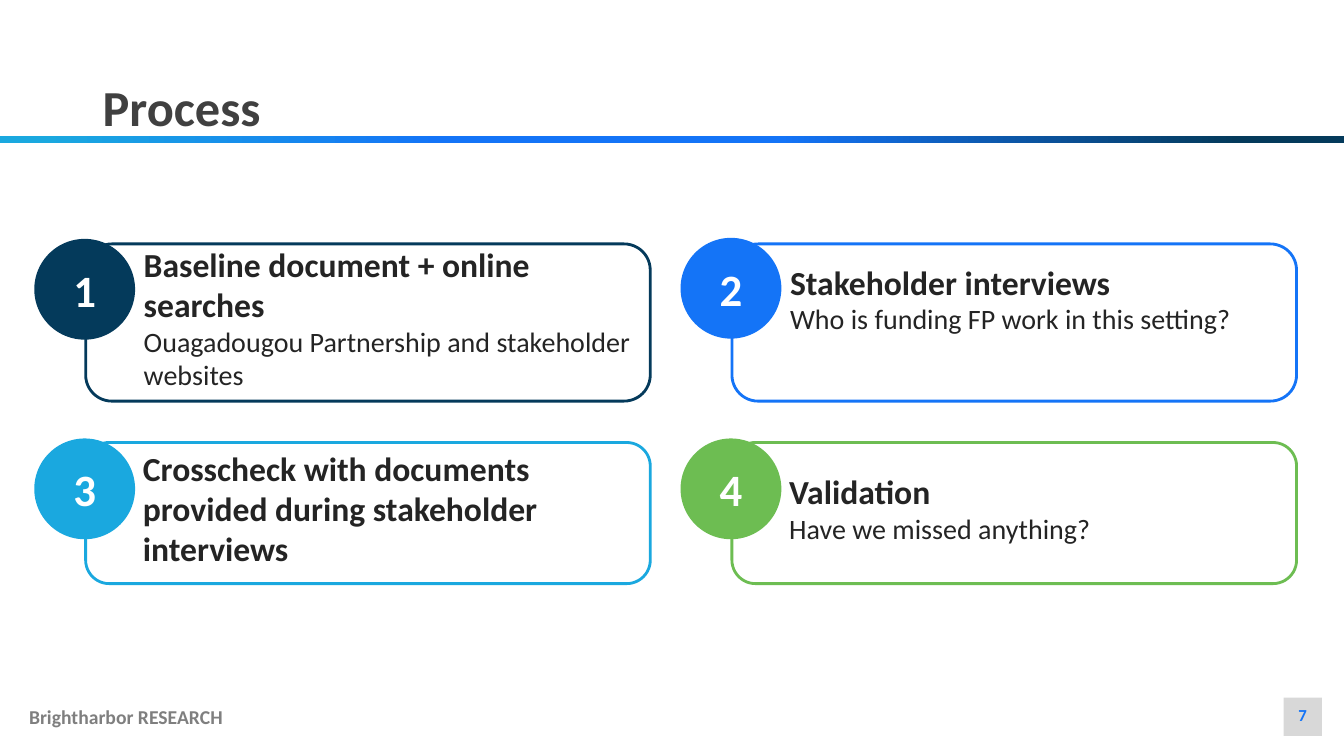
"""Build the four-step "Process" slide."""
import copy

import pptx
import pptx.dml.color
import pptx.enum.shapes
import pptx.enum.text
import pptx.oxml.ns
import pptx.util

PX = 9144
COLORS = {
    "navy": "043A5B", "blue": "1474F7", "sky": "1AA8DF", "green": "6DBD52",
    "ink": "242424", "title": "404040", "footer": "7F7F7F", "badge": "D8D8D8", "white": "FFFFFF",
}
SHAPES = pptx.enum.shapes.MSO_SHAPE
TOP = pptx.enum.text.MSO_ANCHOR.TOP
MIDDLE = pptx.enum.text.MSO_ANCHOR.MIDDLE
LEFT = pptx.enum.text.PP_ALIGN.LEFT
CENTER = pptx.enum.text.PP_ALIGN.CENTER

deck = pptx.Presentation()
deck.slide_width, deck.slide_height = 1333 * PX, 750 * PX
slide = deck.slides.add_slide(deck.slide_layouts[6])


def add_part(kind, box, fill=None, outline=None):
    part = slide.shapes.add_shape(kind, *[length * PX for length in box])
    part.shadow.inherit = False
    for paint, color in ((part.fill, fill), (part.line.fill, outline)):
        if color:
            paint.solid()
            paint.fore_color.rgb = pptx.dml.color.RGBColor.from_string(COLORS[color])
        else:
            paint.background()
    if outline:
        part.line.width = pptx.util.Pt(2)
    return part


def write(part, lines, anchor=TOP, align=LEFT, margins=(10, 5, 10, 5), spacing=None):
    frame = part.text_frame
    left, top, right, bottom = [margin * PX for margin in margins]
    frame_format = {
        "word_wrap": True, "vertical_anchor": anchor, "margin_left": left,
        "margin_top": top, "margin_right": right, "margin_bottom": bottom,
    }
    for name, value in frame_format.items():
        setattr(frame, name, value)
    for index, (words, size, bold, color) in enumerate(lines):
        paragraph = frame.add_paragraph() if index else frame.paragraphs[0]
        paragraph.alignment = align
        paragraph.line_spacing = spacing
        run = paragraph.add_run()
        run.text = words
        font_format = {"name": "Calibri", "size": pptx.util.Pt(size), "bold": bold}
        for name, value in font_format.items():
            setattr(run.font, name, value)
        run.font.color.rgb = pptx.dml.color.RGBColor.from_string(COLORS[color])


add_part(SHAPES.RECTANGLE, (1273, 692, 38, 38), "badge")

title_rule = add_part(SHAPES.RECTANGLE, (0, 135, 1334, 7))
title_rule.fill.gradient()
title_rule.fill.gradient_angle = 0
stop_list = title_rule._element.spPr.find(".//" + pptx.oxml.ns.qn("a:gsLst"))
rule_stops = [(0, "sky"), (0.03, "sky"), (0.33, "blue"), (0.58, "blue"), (0.92, "navy"), (1, "navy")]
while len(stop_list) < len(rule_stops):
    stop_list.append(copy.deepcopy(stop_list[0]))
for stop, (position, color) in zip(title_rule.fill.gradient_stops, rule_stops):
    stop.position = position
    stop.color.rgb = pptx.dml.color.RGBColor.from_string(COLORS[color])

labels = [
    ("7", (1271, 694, 42, 30), 12, "blue", CENTER, None),
    ("Brightharbor RESEARCH", (19, 694, 280, 34), 14, "footer", LEFT, None),
    ("Process", (92, 65, 1078, 58), 36, "title", LEFT, 1.1),
]
for words, box, size, color, align, spacing in labels:
    label = slide.shapes.add_textbox(*[length * PX for length in box])
    write(label, [(words, size, True, color)], align=align, spacing=spacing)

steps = [
    ("navy", 237, MIDDLE, "Baseline document + online searches",
     "Ouagadougou Partnership and stakeholder websites"),
    ("blue", 236, TOP, "Stakeholder interviews", "Who is funding FP work in this setting?"),
    ("sky", 435, MIDDLE, "Crosscheck with documents provided during stakeholder interviews", None),
    ("green", 435, MIDDLE, "Validation", "Have we missed anything?"),
]
rows = [(242, 156), (439, 140)]
for index, (color, circle_top, anchor, heading, detail) in enumerate(steps):
    row, column = divmod(index, 2)
    card_top, card_height = rows[row]
    card = add_part(SHAPES.ROUNDED_RECTANGLE, (85 + 641 * column, card_top, 560, card_height), outline=color)
    lines = [(heading, 24, True, "ink")]
    if detail:
        lines.append((detail, 20, False, "ink"))
    write(card, lines, anchor, margins=(50, 10, 10, 20))
    circle = add_part(SHAPES.OVAL, (34 + 641 * column, circle_top, 100, 100), color)
    write(circle, [(str(index + 1), 32, True, "white")], MIDDLE, CENTER)

deck.save("out.pptx")
